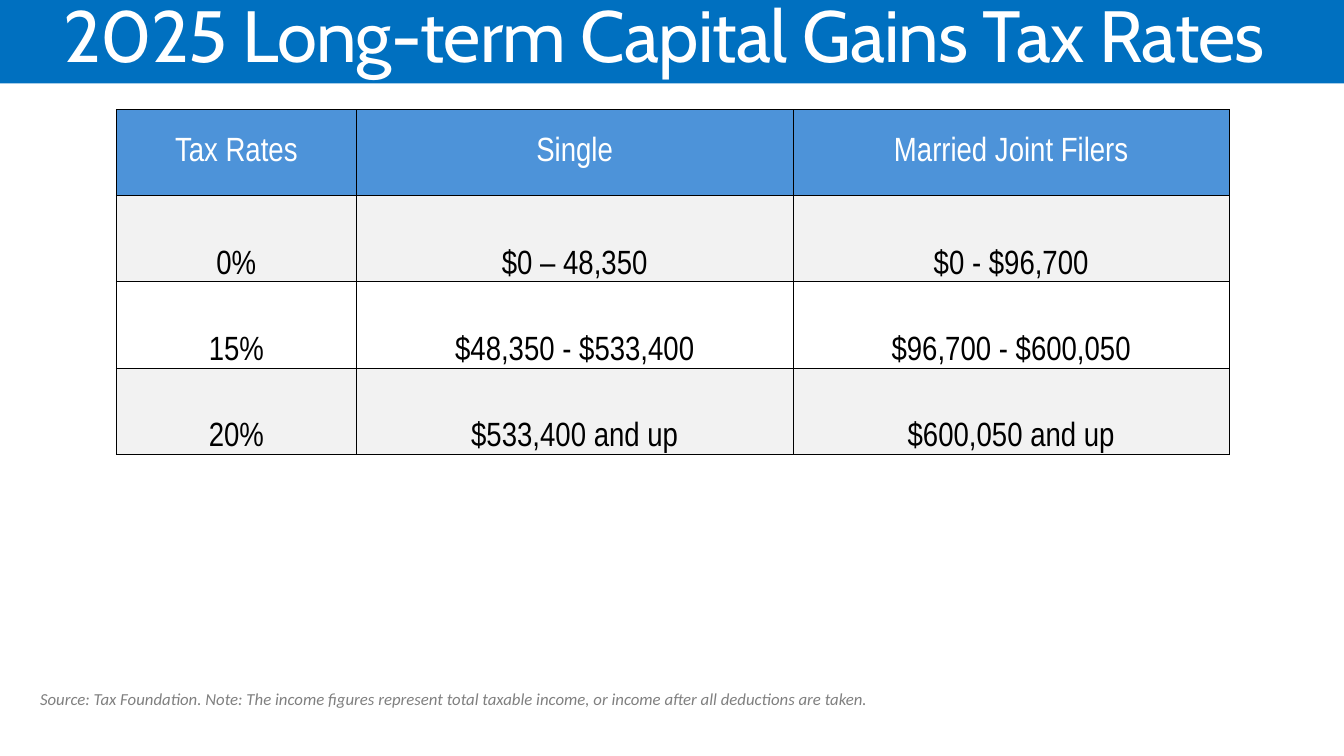
from lxml.etree import SubElement
from pptx import Presentation
from pptx.dml.color import RGBColor
from pptx.enum.shapes import MSO_SHAPE
from pptx.enum.text import MSO_ANCHOR, PP_ALIGN
from pptx.oxml.ns import qn
from pptx.util import Cm, Pt

COLORS = {
    "banner": "0070C0",
    "header": "4D93D9",
    "band": "F2F2F2",
    "white": "FFFFFF",
    "black": "000000",
    "source": "808080",
}

TAX_BRACKETS = [
    ("Tax Rates", "Single", "Married Joint Filers"),
    ("0%", "$0 – 48,350", "$0 - $96,700"),
    ("15%", "$48,350 - $533,400", "$96,700 - $600,050"),
    ("20%", "$533,400 and up", "$600,050 and up"),
]
COLUMN_WIDTHS = (6.05, 11, 11)
ROW_HEIGHT = 2.17


def rgb(name):
    return RGBColor.from_string(COLORS[name])


def style_text(paragraph, font_name, size, color, align=PP_ALIGN.LEFT):
    paragraph.alignment = align
    for run in paragraph.runs:
        run.font.name = font_name
        run.font.size = Pt(size)
        run.font.color.rgb = rgb(color)


def add_title_banner(slide, title, width):
    banner = slide.shapes.add_shape(MSO_SHAPE.RECTANGLE, 0, 0, width, Cm(2.1))
    banner.shadow.inherit = False
    banner.fill.solid()
    banner.fill.fore_color.rgb = rgb("banner")
    banner.line.fill.background()
    frame = banner.text_frame
    frame.word_wrap = True
    frame.vertical_anchor = MSO_ANCHOR.MIDDLE
    frame.text = title
    heading = frame.paragraphs[0]
    heading.line_spacing = 0.8
    style_text(heading, "Cabin", 51.8, "white", PP_ALIGN.CENTER)
    heading.runs[0].font._element.set("spc", "-60")


def add_borders(cell):
    """Draw a thin black line on all four sides of the cell."""
    properties = cell._tc.get_or_add_tcPr()
    for position, side in enumerate(("a:lnL", "a:lnR", "a:lnT", "a:lnB")):
        border = SubElement(properties, qn(side), w=str(Pt(0.5)))
        properties.insert(position, border)
        fill = SubElement(border, qn("a:solidFill"))
        SubElement(fill, qn("a:srgbClr"), val=COLORS["black"])


def fill_cell(cell, text, is_header, fill):
    cell.margin_left = cell.margin_right = cell.margin_top = Cm(0.03)
    cell.margin_bottom = 0
    cell.vertical_anchor = MSO_ANCHOR.MIDDLE if is_header else MSO_ANCHOR.BOTTOM
    cell.fill.solid()
    cell.fill.fore_color.rgb = rgb(fill)
    add_borders(cell)
    cell.text_frame.text = text
    style_text(cell.text_frame.paragraphs[0], "Arial Narrow", 24,
               "white" if is_header else "black", PP_ALIGN.CENTER)


def add_rate_table(slide):
    table = slide.shapes.add_table(
        len(TAX_BRACKETS), len(COLUMN_WIDTHS), Cm(2.93), Cm(2.76),
        Cm(sum(COLUMN_WIDTHS)), Cm(ROW_HEIGHT * len(TAX_BRACKETS))).table
    for column, width in zip(table.columns, COLUMN_WIDTHS):
        column.width = Cm(width)
    for row_index, bracket in enumerate(TAX_BRACKETS):
        table.rows[row_index].height = Cm(ROW_HEIGHT)
        if row_index == 0:
            fill = "header"
        else:
            fill = "band" if row_index % 2 else "white"
        for column_index, text in enumerate(bracket):
            fill_cell(table.cell(row_index, column_index), text,
                      row_index == 0, fill)


def add_source_note(slide, text):
    note = slide.shapes.add_textbox(Cm(0.76), Cm(17.22), Cm(27.71), Cm(0.77))
    note.text_frame.word_wrap = True
    note.text_frame.text = text
    sentence = note.text_frame.paragraphs[0]
    style_text(sentence, "Calibri", 12, "source")
    sentence.runs[0].font.italic = True


def main():
    deck = Presentation()
    deck.slide_width, deck.slide_height = Cm(33.87), Cm(19.05)
    slide = deck.slides.add_slide(deck.slide_layouts[6])
    add_title_banner(slide, "2025 Long-term Capital Gains Tax Rates ",
                     deck.slide_width)
    add_source_note(slide, "Source: Tax Foundation. Note: The income figures "
                           "represent total taxable income, or income after "
                           "all deductions are taken.")
    add_rate_table(slide)
    deck.save("out.pptx")


if __name__ == "__main__":
    main()
